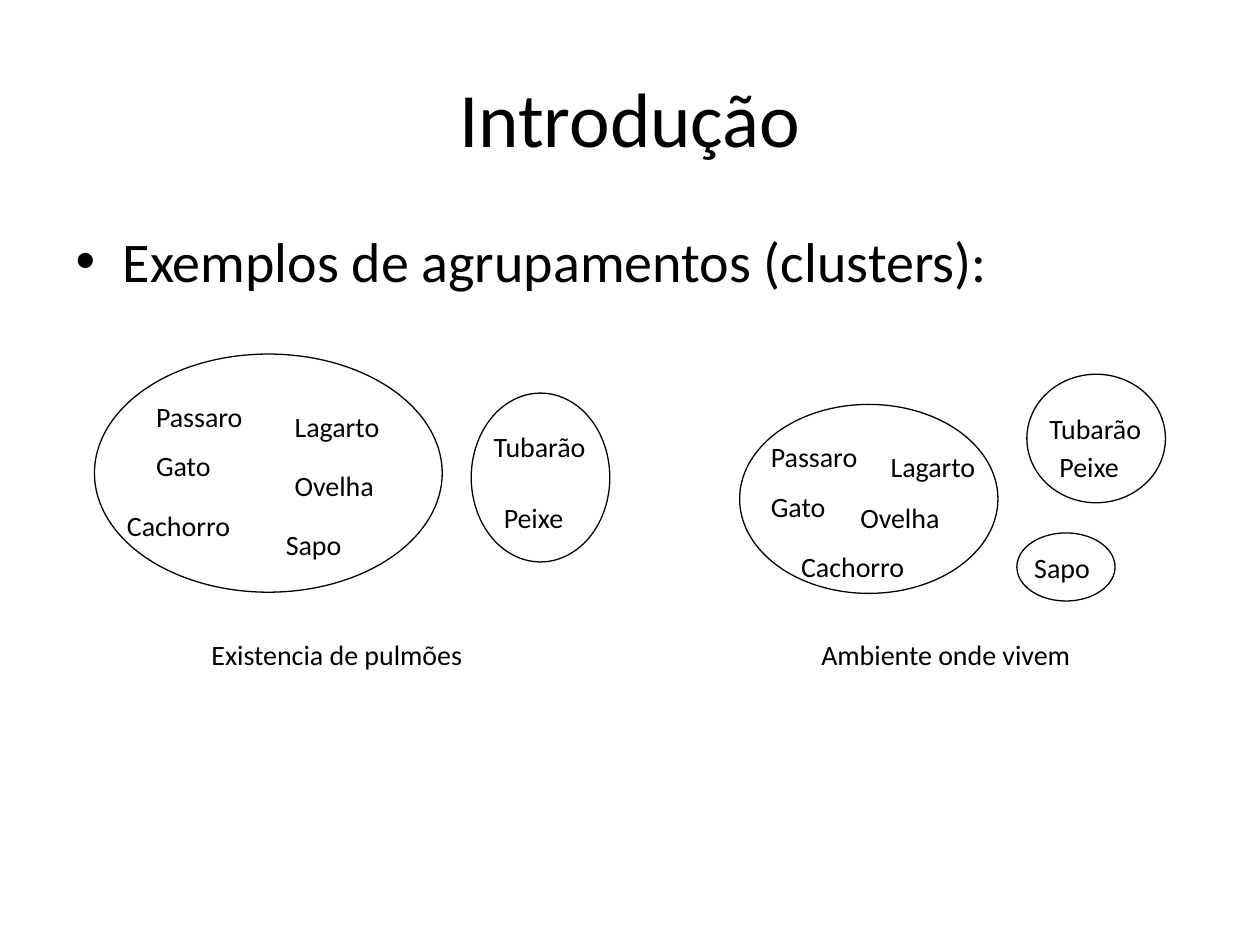
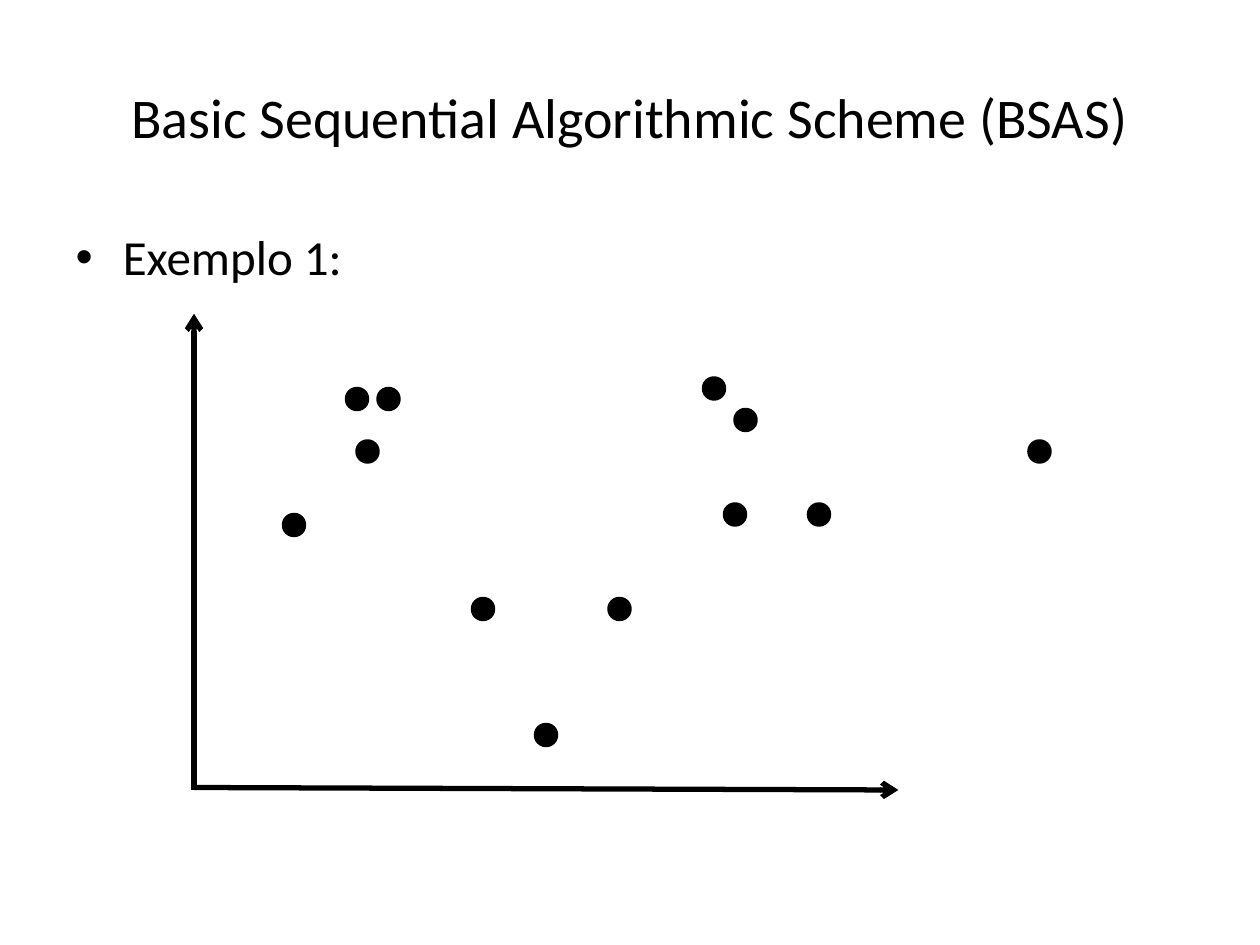
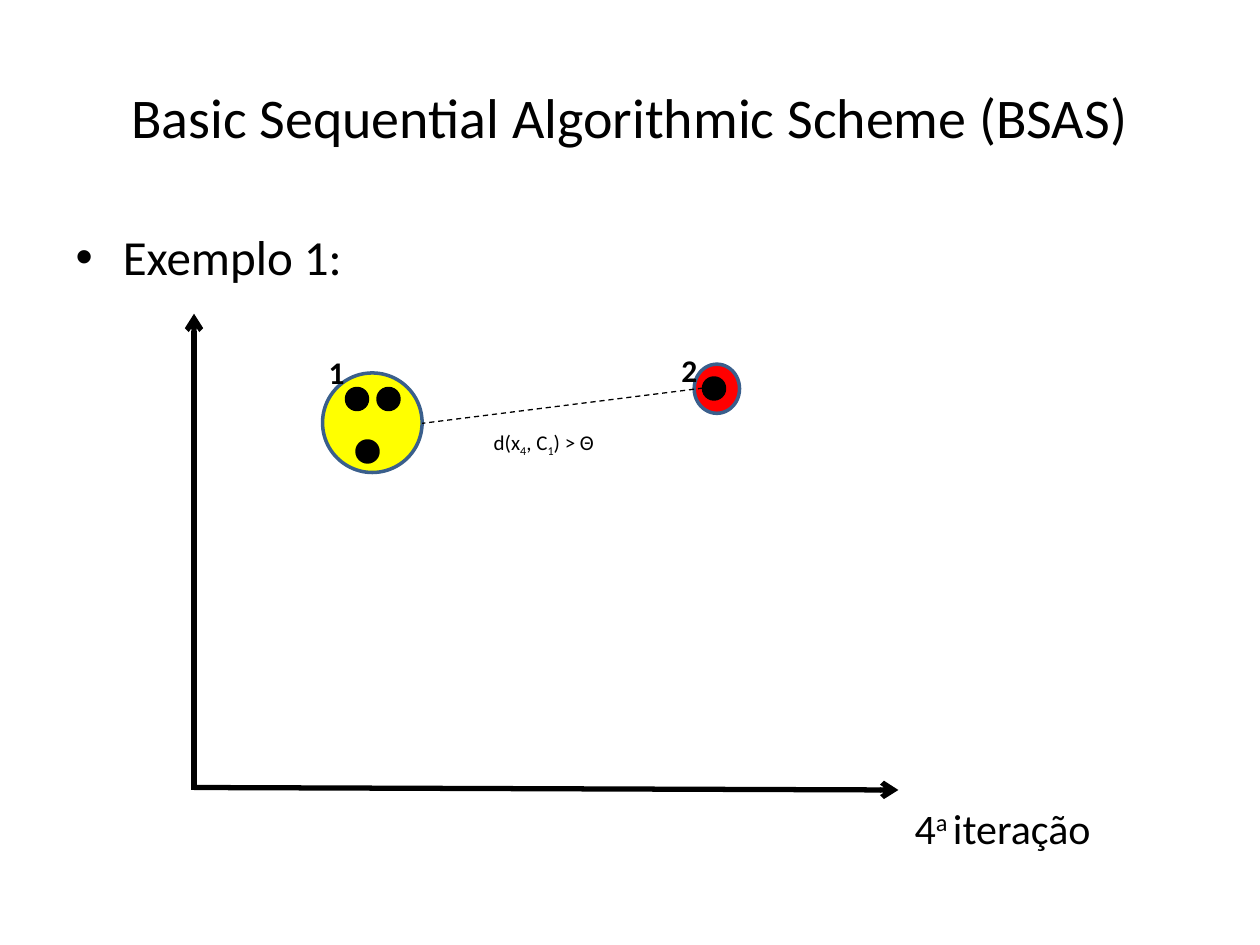
from dataclasses import dataclass

from lxml.etree import SubElement
from pptx import Presentation
from pptx.dml.color import RGBColor
from pptx.enum.dml import MSO_LINE_DASH_STYLE as DashStyle
from pptx.enum.shapes import MSO_CONNECTOR as Connector
from pptx.enum.shapes import MSO_SHAPE as Preset
from pptx.enum.text import MSO_ANCHOR as Anchor
from pptx.enum.text import MSO_AUTO_SIZE as AutoSize
from pptx.enum.text import PP_ALIGN as Align
from pptx.oxml.ns import qn
from pptx.util import Inches, Pt


@dataclass(frozen=True)
class Theme:
    font: str = "Calibri"
    ink: str = "000000"
    first_cluster: str = "FFFF00"
    second_cluster: str = "FF0000"
    cluster_line: str = "3A5F8C"
    title_size: int = 44
    long_title_size: int = 32
    body_size: int = 32
    example_size: int = 28
    iteration_size: int = 24
    number_size: int = 18
    label_size: int = 16
    formula_size: int = 12
    thin: float = 0.75
    outline: float = 2
    axis: float = 3


@dataclass(frozen=True)
class Grid:
    columns: int

    def place(self, *cells):
        return [Inches(10 * cell / self.columns) for cell in cells]


THEME = Theme()
WIDE = Grid(100)
PLOT = Grid(120)
LONG_TITLE = "Basic Sequential Algorithmic Scheme (BSAS)"

LABEL_HEIGHT = 3.7
LABEL_WIDTHS = {
    "Gato": 6.4, "Cachorro": 10.3, "Peixe": 6.8, "Sapo": 6.5,
    "Lagarto": 8.8, "Tubarão": 9.4, "Passaro": 9, "Ovelha": 8.4,
    "Existencia de pulmões": 22.1, "Ambiente onde vivem": 22,
}
LUNG_LABELS = [
    ("Gato", 11.4, 35.1), ("Cachorro", 9.1, 39.9), ("Peixe", 39, 39.2),
    ("Sapo", 21.7, 41.4), ("Lagarto", 22.4, 32), ("Tubarão", 38.2, 33.6),
    ("Passaro", 11.4, 31.2), ("Ovelha", 22.4, 36.7),
    ("Existencia de pulmões", 15.8, 50.1),
]
LUNG_CLUSTERS = [(7.5, 28.1, 27.6, 18.9), (37.4, 31.2, 11, 13.4)]
HABITAT_LABELS = [
    ("Gato", 60.2, 38.4), ("Cachorro", 62.6, 43.1), ("Peixe", 83.1, 35.2),
    ("Sapo", 81.1, 43.2), ("Lagarto", 69.7, 35.2), ("Tubarão", 82.3, 32.2),
    ("Passaro", 60.2, 34.4), ("Ovelha", 67.3, 39.2),
    ("Ambiente onde vivem", 64.2, 50.1),
]
HABITAT_CLUSTERS = [(58.7, 32.1, 20.5, 15), (81.5, 29.7, 11, 10.2), (80.7, 42.3, 7.8, 5.4)]

POINT_SIZE = 2
FIRST_POINTS = [(33, 37), (36, 37), (34, 42)]
FOURTH_POINT = (67, 36)
OTHER_POINTS = [(27, 49), (70, 39), (69, 48), (77, 48), (45, 57), (98, 42), (58, 57), (51, 69)]


def write(frame, *runs, size, bold=False, align=None):
    paragraph = frame.paragraphs[0]
    paragraph.space_before = Pt(0)
    if align is not None:
        paragraph.alignment = align
    for text, baseline in runs:
        run = paragraph.add_run()
        run.text = text
        run.font.name = THEME.font
        run.font.size = Pt(size)
        run.font.bold = bold
        run.font.color.rgb = RGBColor.from_string(THEME.ink)
        if baseline:
            run._r.get_or_add_rPr().set("baseline", str(baseline * 1000))


def add_label(slide, box, *runs, **text_format):
    frame = slide.shapes.add_textbox(*box).text_frame
    frame.word_wrap = False
    frame.auto_size = AutoSize.SHAPE_TO_FIT_TEXT
    write(frame, *runs, **text_format)


def add_ellipse(slide, box, fill=None, line=THEME.ink, width=THEME.outline):
    shape = slide.shapes.add_shape(Preset.OVAL, *box)
    shape.shadow.inherit = False
    if fill:
        shape.fill.solid()
        shape.fill.fore_color.rgb = RGBColor.from_string(fill)
    else:
        shape.fill.background()
    shape.line.color.rgb = RGBColor.from_string(line)
    shape.line.width = Pt(width)


def add_line(slide, ends, width, arrow=False, dash=None):
    connector = slide.shapes.add_connector(Connector.STRAIGHT, *ends)
    connector.line.color.rgb = RGBColor.from_string(THEME.ink)
    connector.line.width = Pt(width)
    if dash is not None:
        connector.line.dash_style = dash
    if arrow:
        SubElement(connector.line._get_or_add_ln(), qn("a:tailEnd"), type="arrow")
    SubElement(connector._element.spPr, qn("a:effectLst"))


def add_slide(presentation, title, title_size, body, body_size):
    slide = presentation.slides.add_slide(presentation.slide_layouts[1])
    heading, content = slide.placeholders
    heading.left, heading.top, heading.width, heading.height = WIDE.place(5, 3, 90, 12.5)
    content.left, content.top, content.width, content.height = WIDE.place(5, 17.5, 90, 49.5)
    heading.text_frame.vertical_anchor = Anchor.MIDDLE
    write(heading.text_frame, (title, 0), size=title_size, align=Align.CENTER)
    write(content.text_frame, (body, 0), size=body_size)
    return slide


def add_diagram(slide, labels, clusters):
    for text, left, top in labels:
        box = WIDE.place(left, top, LABEL_WIDTHS[text], LABEL_HEIGHT)
        add_label(slide, box, (text, 0), size=THEME.label_size)
    for cluster in clusters:
        add_ellipse(slide, WIDE.place(*cluster), width=THEME.thin)


def add_example(presentation):
    slide = add_slide(presentation, LONG_TITLE, THEME.long_title_size, "Exemplo 1:", THEME.example_size)
    add_line(slide, WIDE.place(15.4, 62.7, 15.4, 24.9), THEME.axis, arrow=True)
    add_line(slide, WIDE.place(15.4, 62.5, 71.3, 62.7), THEME.axis, arrow=True)
    return slide


def add_points(slide, points):
    for left, top in points:
        add_ellipse(slide, PLOT.place(left, top, POINT_SIZE, POINT_SIZE), fill=THEME.ink)


def add_cluster(slide, number, fill, cluster, number_corner):
    add_ellipse(slide, WIDE.place(*cluster), fill=fill, line=THEME.cluster_line)
    add_label(slide, WIDE.place(*number_corner, 2.5, 4), (number, 0), size=THEME.number_size, bold=True)


def add_introduction(presentation):
    slide = add_slide(presentation, "Introdução", THEME.title_size,
                      "Exemplos de agrupamentos (clusters):", THEME.body_size)
    add_diagram(slide, LUNG_LABELS, LUNG_CLUSTERS)
    add_diagram(slide, HABITAT_LABELS, HABITAT_CLUSTERS)


def add_fourth_iteration(presentation):
    slide = add_example(presentation)
    add_cluster(slide, "2", THEME.second_cluster, (55.1, 28.9, 3.6, 3.9), (53.1, 27.4))
    add_cluster(slide, "1", THEME.first_cluster, (25.6, 29.6, 7.9, 7.9), (25.1, 27.5))
    add_points(slide, FIRST_POINTS + [FOURTH_POINT])
    add_line(slide, WIDE.place(55.8, 30.8, 33.5, 33.6), THEME.thin, dash=DashStyle.DASH)
    add_label(slide, WIDE.place(38.2, 33.6, 13.9, 3), ("d(x", 0), ("4", -25), (", C", 0),
              ("1", -25), (") > Θ", 0), size=THEME.formula_size)
    add_label(slide, WIDE.place(71.6, 63.2, 16.2, 5), ("4", 0), ("a ", 30),
              ("iteração", 0), size=THEME.iteration_size)


def main():
    presentation = Presentation()
    presentation.slide_width, presentation.slide_height = WIDE.place(100, 75)
    add_introduction(presentation)
    add_points(add_example(presentation), FIRST_POINTS + [FOURTH_POINT] + OTHER_POINTS)
    add_fourth_iteration(presentation)
    presentation.save("out.pptx")


if __name__ == "__main__":
    main()
